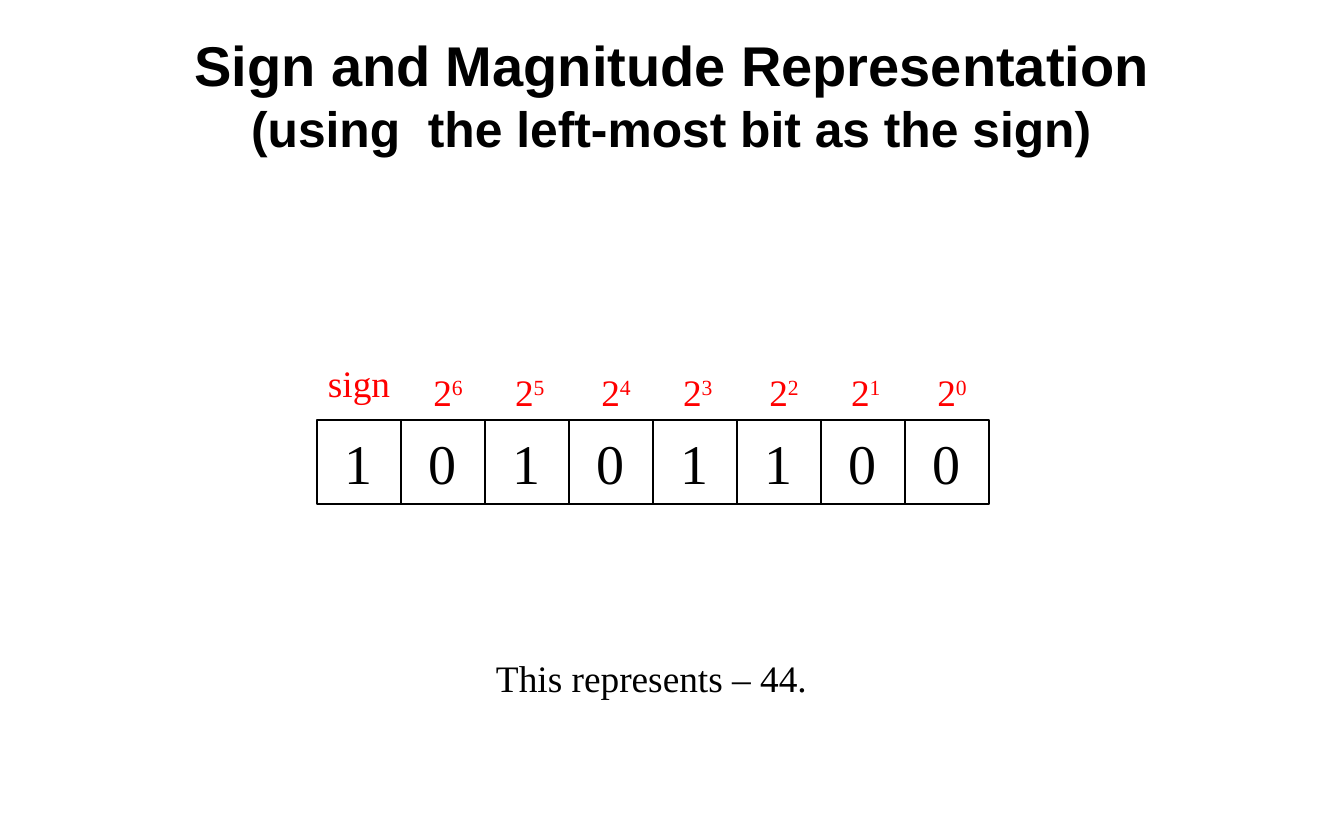
from pptx import Presentation
from pptx.dml.color import RGBColor
from pptx.enum import shapes, text
from pptx.util import Inches, Pt

BLACK = RGBColor(0, 0, 0)
RED = RGBColor(255, 0, 0)
SERIF = "Times New Roman"
BITS = "10101100"
CELL = 0.75
ROW_LEFT, ROW_TOP = 2.83, 3.75


def add_run(p, content, size=24, font=SERIF, color=BLACK, bold=False, baseline=0):
    """Append a formatted run to a paragraph."""
    r = p.add_run()
    r.text = content
    r.font.size = Pt(size)
    r.font.name = font
    r.font.bold = bold
    r.font.color.rgb = color
    if baseline:
        r.font._element.set("baseline", str(baseline * 1000))


def add_label(s, left, top, width, height=0.51):
    """Add a text box that fits its text and return its paragraph."""
    sp = s.shapes.add_textbox(*map(Inches, (left, top, width, height)))
    tf = sp.text_frame
    tf.word_wrap = False
    tf.auto_size = text.MSO_AUTO_SIZE.SHAPE_TO_FIT_TEXT
    return tf.paragraphs[0]


def add_title(s):
    """Add the two-line slide title."""
    sp = s.shapes.add_textbox(*map(Inches, (1, 0.21, 10, 1.25)))
    tf = sp.text_frame
    tf.word_wrap = True
    tf.vertical_anchor = text.MSO_ANCHOR.MIDDLE
    p = tf.paragraphs[0]
    p.alignment = text.PP_ALIGN.CENTER
    add_run(p, "Sign and Magnitude Representation", size=36, font="Arial", bold=True)
    p.add_line_break()
    add_run(p, "(using  the left-most bit as the sign)", size=32, font="Arial", bold=True)


def add_bit(group, left, bit):
    """Add one square cell holding a bit."""
    sp = group.shapes.add_shape(shapes.MSO_SHAPE.RECTANGLE,
                                *map(Inches, (left, ROW_TOP, CELL, CELL)))
    sp.shadow.inherit = False
    sp.fill.background()
    sp.line.color.rgb = BLACK
    sp.line.width = Pt(1.5)
    tf = sp.text_frame
    tf.word_wrap = False
    tf.vertical_anchor = text.MSO_ANCHOR.MIDDLE
    p = tf.paragraphs[0]
    p.alignment = text.PP_ALIGN.CENTER
    add_run(p, bit, size=36)


def add_power(s, left, exponent):
    """Add the place value of one bit as a power of two."""
    p = add_label(s, left, 3.25, 0.48)
    add_run(p, "2", color=RED)
    add_run(p, str(exponent), color=RED, baseline=30)


def main():
    """Build the slide and save it."""
    prs = Presentation()
    prs.slide_width, prs.slide_height = Inches(12), Inches(7.5)
    s = prs.slides.add_slide(prs.slide_layouts[6])
    add_title(s)
    group = s.shapes.add_group_shape()
    for i, bit in enumerate(BITS):
        add_bit(group, ROW_LEFT + i * CELL, bit)
    add_run(add_label(s, ROW_LEFT, 3.17, 0.76), "sign", color=RED)
    for i in range(7):
        add_power(s, 3.77 + i * CELL - 0.02 * (i % 2), 6 - i)
    add_run(add_label(s, 4.33, 5.8, 3.01, 0.5), "This represents – 44.")
    prs.save("out.pptx")


if __name__ == "__main__":
    main()
